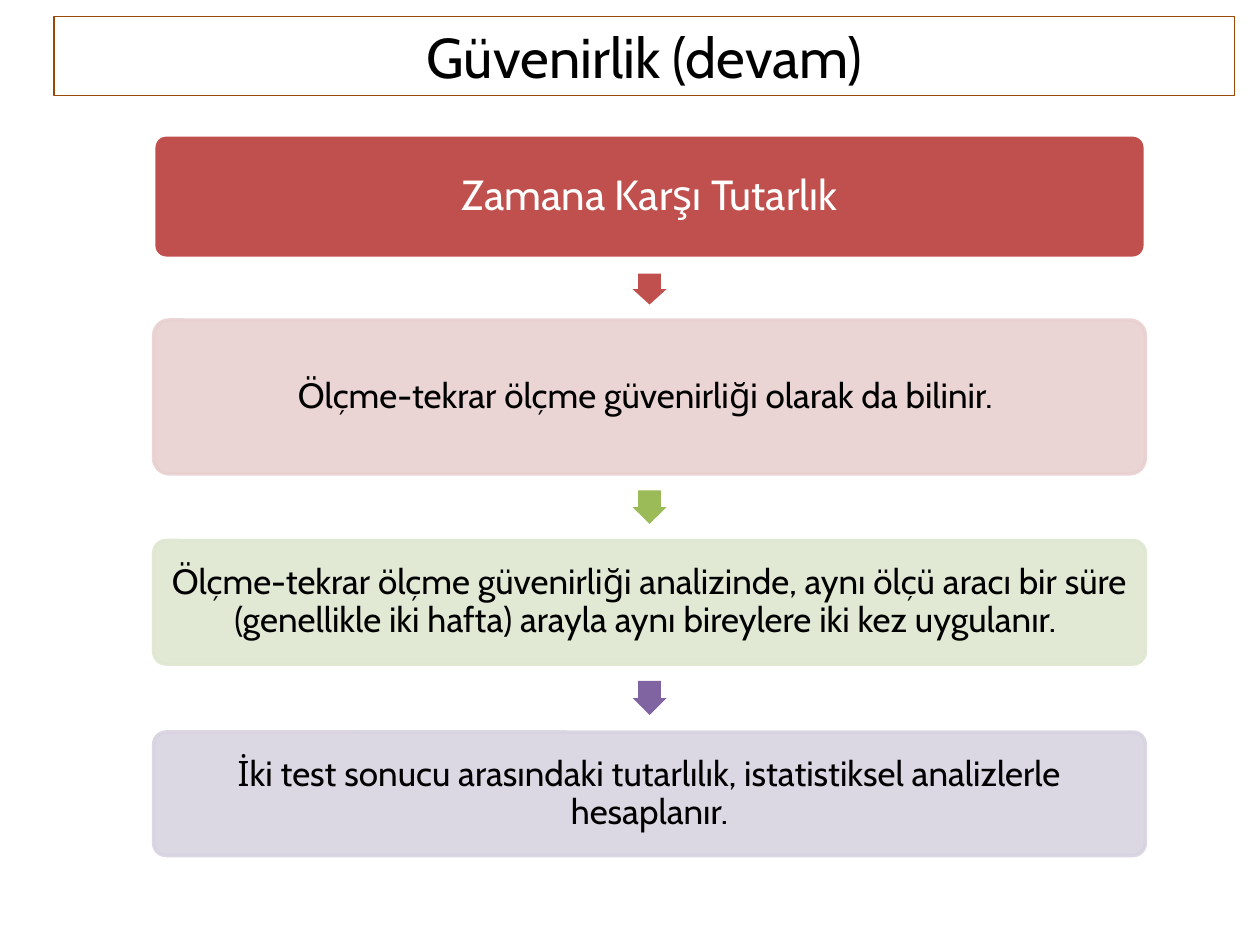
from lxml import etree
from pptx import Presentation
from pptx.dml.color import RGBColor
from pptx.enum.shapes import MSO_SHAPE
from pptx.enum.text import MSO_ANCHOR, PP_ALIGN
from pptx.oxml.ns import qn
from pptx.util import Inches, Pt

FONT = "Cabin"
BLACK = RGBColor(0x00, 0x00, 0x00)
WHITE = RGBColor(0xFF, 0xFF, 0xFF)
BROWN = RGBColor(0x98, 0x48, 0x07)
RED = RGBColor(0xC0, 0x50, 0x4D)
GREEN = RGBColor(0x9B, 0xBB, 0x59)
PURPLE = RGBColor(0x80, 0x64, 0xA2)
PALE_RED = RGBColor(0xE8, 0xD0, 0xD0)
PALE_GREEN = RGBColor(0xDE, 0xE7, 0xD1)
PALE_PURPLE = RGBColor(0xD8, 0xD3, 0xE0)

TITLE = "Güvenirlik (devam)"
HEADING = "Zamana Karşı Tutarlık"
# text, gap above, height, arrow colour, box colour
STEPS = [
    ("Ölçme-tekrar ölçme güvenirliği olarak da bilinir. ",
     0.49, 1.22, RED, PALE_RED),
    ("Ölçme-tekrar ölçme güvenirliği analizinde, aynı ölçü aracı bir süre "
     "(genellikle iki hafta) arayla aynı bireylere iki kez uygulanır. ",
     0.53, 0.98, GREEN, PALE_GREEN),
    ("İki test sonucu arasındaki tutarlılık, istatistiksel analizlerle hesaplanır.",
     0.54, 0.98, PURPLE, PALE_PURPLE),
]

BOX_LEFT, BOX_WIDTH = 1.22, 7.87
HEADING_TOP, HEADING_HEIGHT = 1.07, 0.98
ARROW_WIDTH = 0.27
BOX_INSET = 0.06


def add_plain_shape(slide, kind, left, top, width, height):
    shape = slide.shapes.add_shape(
        kind, Inches(left), Inches(top), Inches(width), Inches(height))
    shape.shadow.inherit = False
    return shape


def write_text(shape, text, size, color):
    text_frame = shape.text_frame
    text_frame.word_wrap = True
    text_frame.text = text
    paragraph = text_frame.paragraphs[0]
    paragraph.alignment = PP_ALIGN.CENTER
    font = paragraph.runs[0].font
    font.name, font.size = FONT, Pt(size)
    font.color.rgb = color
    return paragraph


def set_opacity(shape, percent):
    """Make both fill and outline partly transparent."""
    for color in shape._element.spPr.iter(qn("a:srgbClr")):
        etree.SubElement(color, qn("a:alpha")).set("val", str(percent * 1000))


def add_box(slide, text, top, height, fill, line, size, color):
    box = add_plain_shape(slide, MSO_SHAPE.ROUNDED_RECTANGLE,
                          BOX_LEFT, top, BOX_WIDTH, height)
    box.adjustments[0] = 0.1
    box.fill.solid()
    box.fill.fore_color.rgb = fill
    box.line.color.rgb = line
    box.line.width = Pt(2)
    frame = box.text_frame
    frame.margin_left = frame.margin_right = Inches(BOX_INSET)
    frame.margin_top = frame.margin_bottom = Inches(BOX_INSET)
    frame.vertical_anchor = MSO_ANCHOR.MIDDLE
    write_text(box, text, size, color).line_spacing = 0.9
    return box


def add_arrow(slide, gap_top, gap, color):
    """Centre a downward arrow, half as long as the gap, between two boxes."""
    length = gap / 2
    arrow = add_plain_shape(
        slide, MSO_SHAPE.RIGHT_ARROW,
        BOX_LEFT + (BOX_WIDTH - length) / 2,
        gap_top + (gap - ARROW_WIDTH) / 2, length, ARROW_WIDTH)
    arrow.rotation = 90
    arrow.adjustments[0] = 0.67
    arrow.adjustments[1] = 0.5
    arrow.fill.solid()
    arrow.fill.fore_color.rgb = color
    arrow.line.fill.background()


def main():
    presentation = Presentation()
    presentation.slide_width, presentation.slide_height = Inches(10), Inches(7.5)
    slide = presentation.slides.add_slide(presentation.slide_layouts[6])

    add_box(slide, HEADING, HEADING_TOP, HEADING_HEIGHT, RED, WHITE, 24, WHITE)
    bottom = HEADING_TOP + HEADING_HEIGHT
    for text, gap, height, arrow_color, box_color in STEPS:
        add_arrow(slide, bottom, gap, arrow_color)
        box = add_box(slide, text, bottom + gap, height,
                      box_color, box_color, 20, BLACK)
        set_opacity(box, 90)
        bottom += gap + height

    title = add_plain_shape(slide, MSO_SHAPE.RECTANGLE, 0.43, 0.13, 9.37, 0.63)
    title.fill.background()
    title.line.color.rgb = BROWN
    title.line.width = Pt(0.75)
    title.text_frame.vertical_anchor = MSO_ANCHOR.TOP
    write_text(title, TITLE, 32, BLACK)

    presentation.save("out.pptx")


if __name__ == "__main__":
    main()
